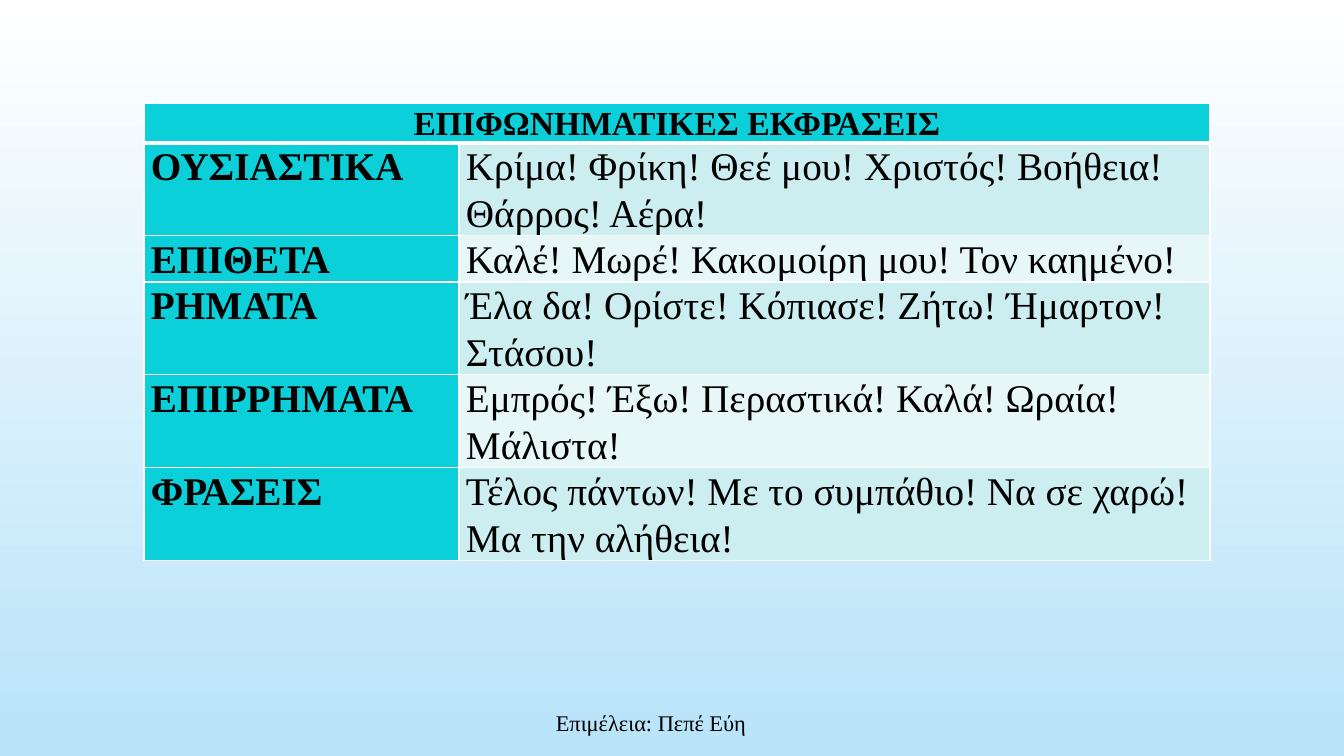
from lxml.etree import SubElement
from pptx import Presentation
from pptx.dml.color import RGBColor
from pptx.enum.text import MSO_ANCHOR, PP_ALIGN
from pptx.oxml.ns import qn
from pptx.util import Emu, Pt

TITLE = "ΕΠΙΦΩΝΗΜΑΤΙΚΕΣ ΕΚΦΡΑΣΕΙΣ"
EXPRESSIONS = [
    ("ΟΥΣΙΑΣΤΙΚΑ", "Κρίμα! Φρίκη! Θεέ μου! Χριστός! Βοήθεια! Θάρρος! Αέρα!"),
    ("ΕΠΙΘΕΤΑ", "Καλέ! Μωρέ! Κακομοίρη μου! Τον καημένο!"),
    ("ΡΗΜΑΤΑ", "Έλα δα! Ορίστε! Κόπιασε! Ζήτω! Ήμαρτον! Στάσου!"),
    ("ΕΠΙΡΡΗΜΑΤΑ", "Εμπρός! Έξω! Περαστικά! Καλά! Ωραία! Μάλιστα!"),
    ("ΦΡΑΣΕΙΣ", "Τέλος πάντων! Με το συμπάθιο! Να σε χαρώ! Μα την αλήθεια!"),
]
CREDIT = "Επιμέλεια: Πεπέ Εύη"

FONT = "Times New Roman"
BACKGROUND = ("FFFFFF", "B8E3F9")
ACCENT = "0BD0D9"
BANDS = ("CCEEF1", "E7F7F8")
COLUMN_WIDTHS = (315, 751)
ROW_HEIGHTS = (39, 92, 46, 92, 92, 92)


def px(length):
    return Emu(round(length * 914400 / 100.8))


def color(code):
    return RGBColor.from_string(code)


def write(frame, text, size, bold=False, align=PP_ALIGN.LEFT):
    para = frame.paragraphs[0]
    para.add_run().text = text
    para.alignment = align
    para.font.name = FONT
    para.font.size = Pt(size)
    para.font.bold = bold
    para.font.color.rgb = color("000000")
    return para


def add_borders(cell, top, bottom):
    """Draw white cell edges; top and bottom are widths in points."""
    properties = cell._tc.get_or_add_tcPr()
    for side, width in (("L", 1), ("R", 1), ("T", top), ("B", bottom)):
        line = SubElement(properties, qn(f"a:ln{side}"), w=str(Pt(width)))
        fill = SubElement(line, qn("a:solidFill"))
        SubElement(fill, qn("a:srgbClr"), val="FFFFFF")


def style_cell(cell, fill, top=1, bottom=1):
    cell.margin_left = cell.margin_right = px(7)
    cell.margin_top = cell.margin_bottom = 0
    add_borders(cell, top, bottom)
    cell.fill.solid()
    cell.fill.fore_color.rgb = color(fill)


def fill_cell(cell, text, size, bold, align=PP_ALIGN.LEFT):
    write(cell.text_frame, text, size, bold, align).line_spacing = 1.07


deck = Presentation()
deck.slide_width, deck.slide_height = px(1344), px(756)
page = deck.slides.add_slide(deck.slide_layouts[6])

backdrop = page.background.fill
backdrop.gradient()
backdrop.gradient_angle = 270
for stop, code in zip(backdrop.gradient_stops, BACKGROUND):
    stop.color.rgb = color(code)

table = page.shapes.add_table(
    len(ROW_HEIGHTS), len(COLUMN_WIDTHS), px(144), px(103),
    px(sum(COLUMN_WIDTHS)), px(sum(ROW_HEIGHTS))).table
for column, width in zip(table.columns, COLUMN_WIDTHS):
    column.width = px(width)
for row, height in zip(table.rows, ROW_HEIGHTS):
    row.height = px(height)

header = table.cell(0, 0)
header.merge(table.cell(0, 1))
for cell in table.rows[0].cells:
    style_cell(cell, ACCENT, bottom=3)
fill_cell(header, TITLE, 24, True, PP_ALIGN.CENTER)

for index, (category, examples) in enumerate(EXPRESSIONS):
    label, content = table.rows[index + 1].cells
    top = 1 if index else 3
    style_cell(label, ACCENT, top)
    style_cell(content, BANDS[index % 2], top)
    fill_cell(label, category, 28, True)
    fill_cell(content, examples, 28, False)

credit = page.shapes.add_textbox(px(283), px(703), px(736), px(40)).text_frame
credit.word_wrap = True
credit.vertical_anchor = MSO_ANCHOR.MIDDLE
write(credit, CREDIT, 16, align=PP_ALIGN.CENTER)

deck.save("out.pptx")
